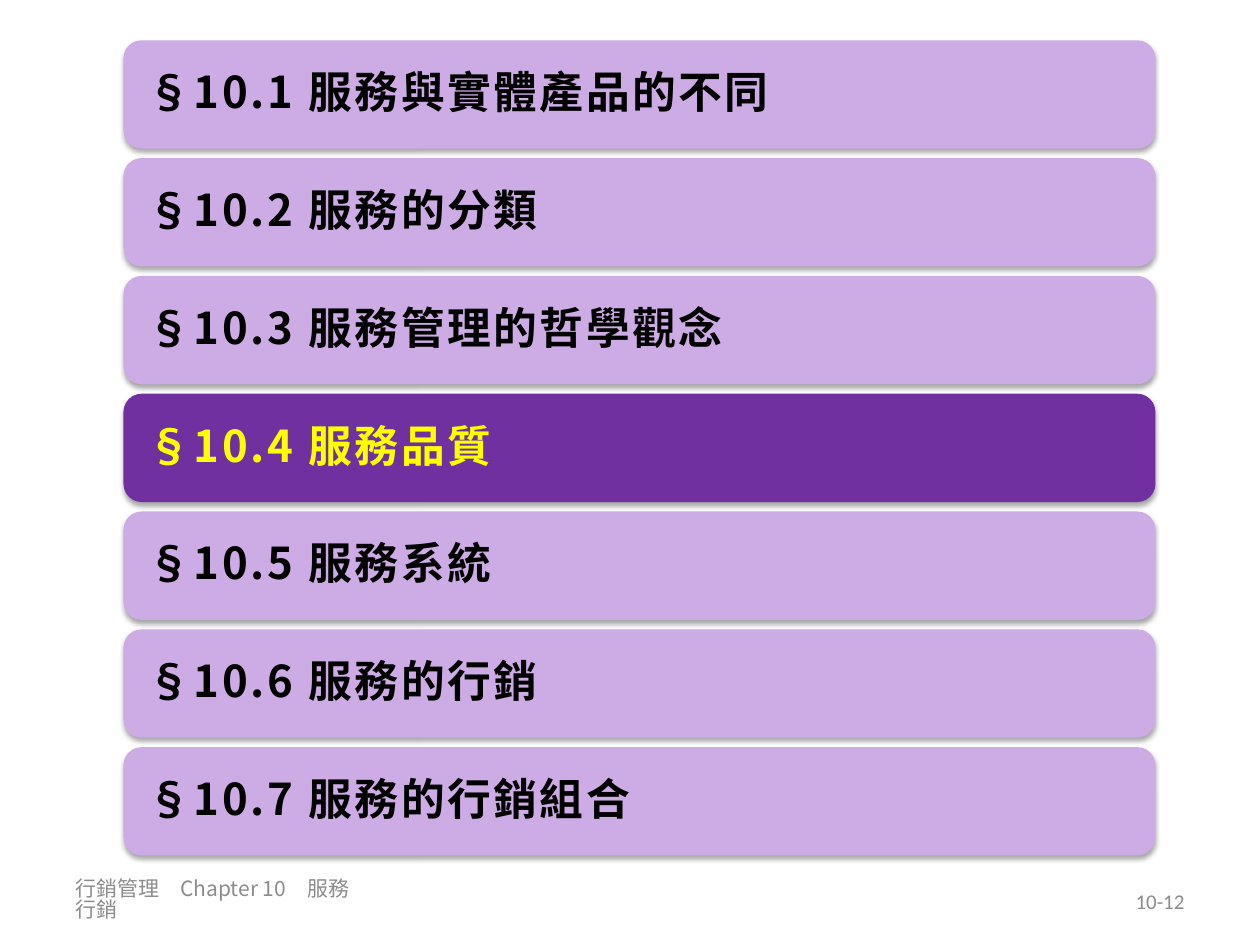
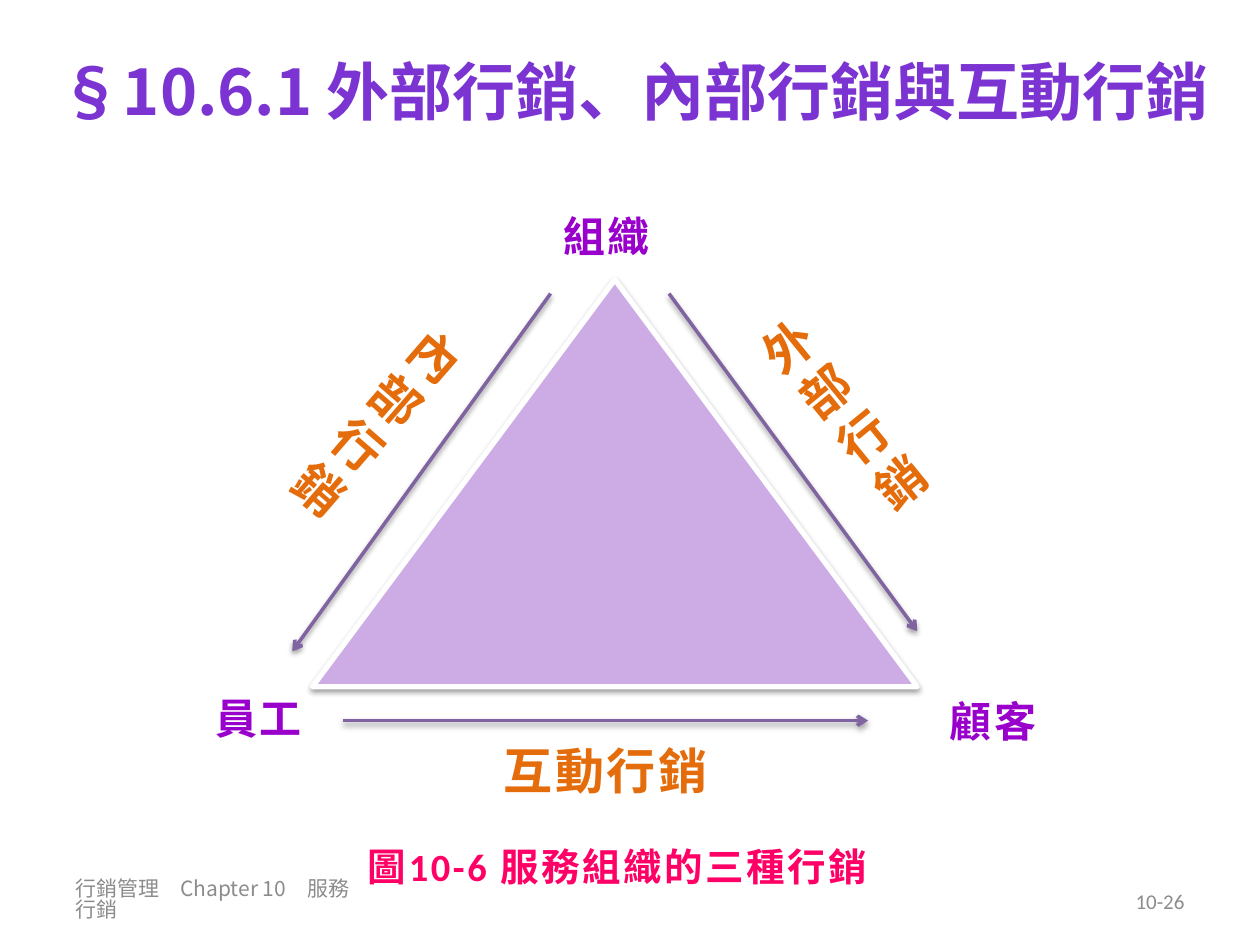
from lxml import etree
from pptx import Presentation
from pptx.dml.color import RGBColor
from pptx.enum.shapes import MSO_CONNECTOR, MSO_SHAPE as SHAPE
from pptx.enum.text import MSO_ANCHOR as ANCHOR, MSO_AUTO_SIZE, PP_ALIGN as ALIGN
from pptx.oxml import parse_xml
from pptx.oxml.ns import nsdecls, qn
from pptx.util import Inches, Pt

# Shared style
LATIN = "Calibri"
CJK = "Noto Sans CJK SC"
LILAC = RGBColor(0xCD, 0xAC, 0xE6)
PURPLE = RGBColor(0x70, 0x30, 0xA0)
TITLE = RGBColor(0x7B, 0x34, 0xD2)
ARROW = RGBColor(0x80, 0x64, 0xA2)
VIOLET = RGBColor(0x99, 0x00, 0xCC)
ORANGE = RGBColor(0xE4, 0x6C, 0x0A)
PINK = RGBColor(0xFF, 0x00, 0x66)
YELLOW = RGBColor(0xFF, 0xFF, 0x00)
BLACK = RGBColor(0, 0, 0)
WHITE = RGBColor(0xFF, 0xFF, 0xFF)
GRAY = RGBColor(0x8C, 0x8C, 0x8C)
TITLE_ONLY, BLANK = 5, 6


def set_face(font, name):
    """Use one typeface for Latin and East Asian text."""
    font.name = name
    etree.SubElement(font._rPr, qn("a:ea")).set("typeface", name)


def add_shadow(shape, alpha):
    """Soft shadow straight below; call after fill and line are set."""
    shape._element.spPr.append(parse_xml(
        f'<a:effectLst {nsdecls("a")}>'
        '<a:outerShdw blurRad="40000" dist="21000" dir="5400000" rotWithShape="0">'
        f'<a:srgbClr val="000000"><a:alpha val="{alpha * 1000}"/></a:srgbClr>'
        '</a:outerShdw></a:effectLst>'))


class Deck:
    def __init__(self):
        self.prs = Presentation()
        self.prs.slide_width = Inches(10)
        self.prs.slide_height = Inches(7.5)
        self.s = None

    def slide(self, number, layout):
        self.s = self.prs.slides.add_slide(self.prs.slide_layouts[layout])
        # Footer and page number
        footer = self.text((0.5, 6.95, 2.45, 0.4), [("行銷管理　Chapter 10　服務行銷", CJK)],
                           12, GRAY, bold=False, spacing=0, anchor=ANCHOR.MIDDLE)
        footer.text_frame.paragraphs[0].line_spacing = 0.83
        self.text((7.17, 6.95, 2.33, 0.4), [(number, LATIN)], 12, GRAY, bold=False,
                  spacing=0, anchor=ANCHOR.MIDDLE, align=ALIGN.RIGHT)

    def fill_text(self, sp, runs, size, color, bold=True, spacing=1.5,
                  anchor=ANCHOR.TOP, align=ALIGN.LEFT):
        tf = sp.text_frame
        tf.word_wrap = True
        tf.auto_size = MSO_AUTO_SIZE.NONE
        tf.vertical_anchor = anchor
        p = tf.paragraphs[0]
        p.alignment = align
        p.font.size = Pt(size)
        p.font.bold = bold
        p.font.color.rgb = color
        p.font._rPr.set("spc", str(int(spacing * 100)))
        if len(runs) == 1:
            set_face(p.font, runs[0][1])
        for text, face in runs:
            r = p.add_run()
            r.text = text
            if len(runs) > 1:
                set_face(r.font, face)
        return p

    def title(self, runs):
        sp = self.s.shapes.title
        sp.left, sp.top, sp.width, sp.height = map(Inches, (0.35, 0.13, 9.37, 1.18))
        self.fill_text(sp, runs, 36, TITLE, spacing=0, anchor=ANCHOR.MIDDLE,
                       align=ALIGN.CENTER)

    def text(self, box, runs, size, color, **style):
        sp = self.s.shapes.add_textbox(*map(Inches, box))
        self.fill_text(sp, runs, size, color, **style)
        return sp

    def tilted(self, box, text, size, color, angle, vert):
        sp = self.text(box, [(text, LATIN)], size, color)
        sp.rotation = angle
        sp.text_frame._txBody.bodyPr.set("vert", vert)

    def shape(self, kind, box, fill, line=None, alpha=38):
        sp = self.s.shapes.add_shape(kind, *map(Inches, box))
        sp.fill.solid()
        sp.fill.fore_color.rgb = fill
        if line is None:
            sp.line.fill.background()
        else:
            sp.line.color.rgb = line
            sp.line.width = Pt(3)
        add_shadow(sp, alpha)
        return sp

    def bar(self, top, runs, fill, color):
        sp = self.shape(SHAPE.ROUNDED_RECTANGLE, (0.98, top, 8.19, 0.86), fill, alpha=35)
        p = self.fill_text(sp, runs, 25, color, anchor=ANCHOR.MIDDLE)
        p.line_spacing = 0.9
        sp.text_frame.margin_left = sp.text_frame.margin_right = Inches(0.15)

    def arrow(self, start, end):
        c = self.s.shapes.add_connector(MSO_CONNECTOR.STRAIGHT, *map(Inches, start + end))
        c.line.color.rgb = ARROW
        c.line.width = Pt(2)
        etree.SubElement(c.line._get_or_add_ln(), qn("a:tailEnd")).set("type", "arrow")
        add_shadow(c, 38)


def section_list(deck):
    deck.slide("10-12", BLANK)
    sections = ["服務與實體產品的不同", "服務的分類", "服務管理的哲學觀念", "服務品質",
                "服務系統", "服務的行銷", "服務的行銷組合"]
    current = 4
    top, pitch = 0.32, 5.61 / 6
    for n, name in enumerate(sections, 1):
        fill, color = (PURPLE, YELLOW) if n == current else (LILAC, BLACK)
        deck.bar(top + (n - 1) * pitch, [(f"§10.{n} ", CJK), (name, LATIN)], fill, color)


def marketing_triangle(deck):
    deck.slide("10-26", TITLE_ONLY)
    deck.title([("§10.6.1 ", CJK), ("外部行銷、內部行銷與互動行銷", LATIN)])

    # Triangle and the arrows along its sides
    deck.shape(SHAPE.ISOSCELES_TRIANGLE, (2.48, 2.22, 4.8, 3.23), LILAC, WHITE)
    for start, end in [((5.31, 2.33), (7.28, 5.01)),
                       ((4.37, 2.33), (2.32, 5.17)),
                       ((2.72, 5.72), (6.89, 5.72))]:
        deck.arrow(start, end)

    # Corners
    for left, top, party in [(4.37, 1.62, "組織"), (7.44, 5.47, "顧客"), (1.61, 5.45, "員工")]:
        deck.text((left, top, 1.05, 0.5), [(party, LATIN)], 24, VIOLET)

    # Sides
    deck.text((3.9, 5.83, 1.99, 0.57), [("互動行銷", LATIN)], 28, ORANGE)
    deck.tilted((5.66, 3.11, 2.09, 0.5), "外部行銷", 28, ORANGE, 50.8, "vert270")
    deck.tilted((1.88, 3.12, 2.09, 0.5), "內部行銷", 28, ORANGE, 311, "vert")

    # Caption
    deck.text((2.82, 6.64, 4.41, 0.47), [("圖10-6 服務組織的三種行銷", LATIN)], 22, PINK)


def main():
    deck = Deck()
    section_list(deck)
    marketing_triangle(deck)
    deck.prs.save("out.pptx")


if __name__ == "__main__":
    main()
